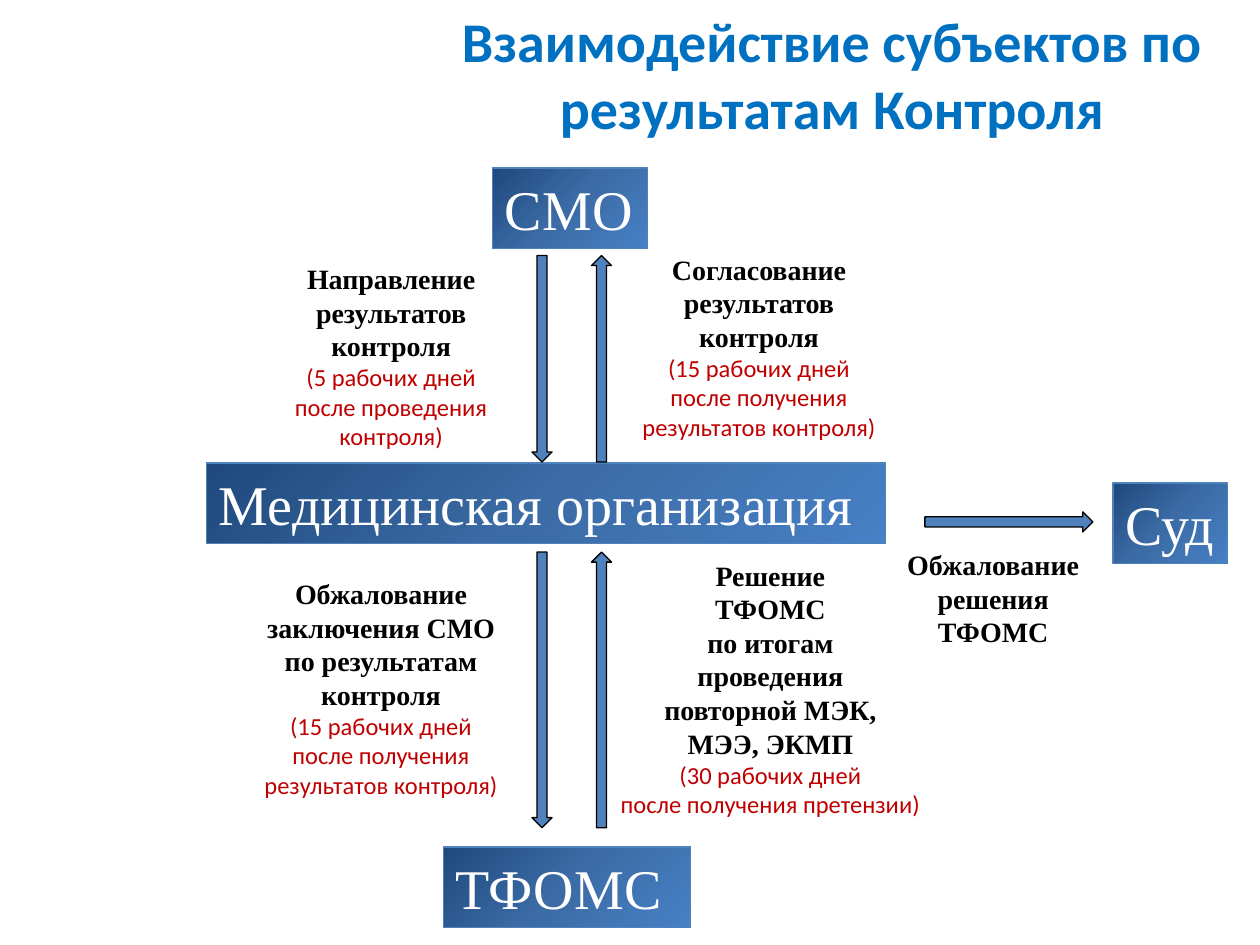
from copy import deepcopy
from typing import NamedTuple

from pptx import Presentation
from pptx.dml.color import RGBColor
from pptx.enum.shapes import MSO_SHAPE as Preset
from pptx.enum.text import MSO_ANCHOR as Anchor, MSO_AUTO_SIZE as AutoSize, PP_ALIGN as Align
from pptx.oxml.ns import qn
from pptx.util import Pt

TITLE_BLUE = RGBColor(0x00, 0x70, 0xC0)
ACCENT = RGBColor(0x4F, 0x81, 0xBD)
BLACK = RGBColor(0x00, 0x00, 0x00)
WHITE = RGBColor(0xFF, 0xFF, 0xFF)
RED = RGBColor(0xC0, 0x00, 0x00)
GRADIENT = (
    (0, RGBColor(0x1F, 0x49, 0x7D)),
    (0.5, RGBColor(0x3C, 0x6C, 0xA6)),
    (1, RGBColor(0x47, 0x80, 0xC5)),
)
SERIF = "Times New Roman"
SANS = "Calibri"

ARROW_THICKNESS = 11.5
DOWN_X, UP_X = 304, 338


class Area(NamedTuple):
    left: float
    top: float
    width: float
    height: float

    def lengths(self):
        return [Pt(value) for value in self]


class Party(NamedTuple):
    name: str
    area: Area
    wrap: bool = True


class Arrow(NamedTuple):
    preset: Preset
    area: Area


class Label(NamedTuple):
    area: Area
    action: list[str]
    deadline: list[str]
    wrap: bool = False


PARTIES = [
    Party("СМО", Area(281.5, 96, 88.5, 46)),
    Party("Медицинская организация", Area(118, 264.5, 388, 46)),
    Party("ТФОМС", Area(253.5, 484, 141, 46)),
    Party("Суд", Area(636, 276, 65.5, 46), wrap=False),
]
ARROWS = [
    Arrow(preset, Area(left, top, ARROW_THICKNESS, height))
    for top, height in ((146, 118), (315.5, 157.5))
    for preset, left in ((Preset.DOWN_ARROW, DOWN_X), (Preset.UP_ARROW, UP_X))
] + [Arrow(Preset.RIGHT_ARROW, Area(528.5, 292.5, 96, ARROW_THICKNESS))]
LABELS = [
    Label(Area(157.5, 146, 132, 116.5),
          ["Направление", "результатов", "контроля"],
          ["(5 рабочих дней", "после проведения", "контроля)"]),
    Label(Area(360, 140.5, 147.5, 116.5),
          ["Согласование", "результатов", "контроля"],
          ["(15 рабочих дней", "после получения", "результатов контроля)"]),
    Label(Area(142.5, 326, 150.5, 155),
          ["Обжалование", "заключения СМО", "по результатам", "контроля"],
          ["(15 рабочих дней", "после получения", "результатов контроля)"]),
    Label(Area(343.5, 315.5, 193.5, 177),
          ["Решение", "ТФОМС", "по итогам", "проведения", "повторной МЭК,", "МЭЭ, ЭКМП"],
          ["(30 рабочих дней", "после получения претензии)"]),
    Label(Area(506, 309.5, 123, 65.5),
          ["Обжалование", "решения", "ТФОМС"], [], wrap=True),
]


def write(frame, text: str, *, font: str, size: float, color: RGBColor,
          bold: bool = False, align: Align = Align.CENTER) -> None:
    """Fill the first paragraph if it is empty, otherwise add one."""
    para = frame.paragraphs[0]
    if para.runs:
        para = frame.add_paragraph()
    para.alignment = align
    span = para.add_run()
    span.text = text
    span.font.name = font
    span.font.size = Pt(size)
    span.font.bold = bold
    span.font.color.rgb = color


def fill_gradient(shape) -> None:
    shape.fill.gradient()
    shape.fill.gradient_angle = 315
    stop_list = shape.element.spPr.find(qn("a:gradFill")).find(qn("a:gsLst"))
    stop_list.insert(1, deepcopy(stop_list[0]))
    for stop, (position, color) in zip(shape.fill.gradient_stops, GRADIENT):
        stop.position = position
        stop.color.rgb = color


def add_outlined(page, preset: Preset, area: Area, line: RGBColor):
    shape = page.shapes.add_shape(preset, *area.lengths())
    shape.shadow.inherit = False
    shape.line.color.rgb = line
    shape.line.width = Pt(0.75)
    return shape


def add_title(page) -> None:
    box = page.shapes.add_textbox(*Area(247.5, 0, 456, 84).lengths())
    box.text_frame.word_wrap = True
    box.text_frame.vertical_anchor = Anchor.MIDDLE
    write(box.text_frame, "Взаимодействие субъектов по результатам Контроля",
          font=SANS, size=32, color=TITLE_BLUE, bold=True)


def add_party(page, party: Party) -> None:
    shape = add_outlined(page, Preset.RECTANGLE, party.area, ACCENT)
    fill_gradient(shape)
    frame = shape.text_frame
    frame.word_wrap = party.wrap
    frame.auto_size = AutoSize.SHAPE_TO_FIT_TEXT
    frame.vertical_anchor = Anchor.TOP
    write(frame, party.name, font=SERIF, size=32, color=WHITE, align=Align.LEFT)


def add_arrow(page, arrow: Arrow) -> None:
    shape = add_outlined(page, arrow.preset, arrow.area, BLACK)
    shape.fill.solid()
    shape.fill.fore_color.rgb = ACCENT


def add_label(page, label: Label) -> None:
    frame = page.shapes.add_textbox(*label.area.lengths()).text_frame
    frame.word_wrap = label.wrap
    frame.auto_size = AutoSize.SHAPE_TO_FIT_TEXT
    for text in label.action:
        write(frame, text, font=SERIF, size=16, color=BLACK, bold=True)
    for text in label.deadline:
        write(frame, text, font=SANS, size=14, color=RED)


def main() -> None:
    deck = Presentation()
    deck.slide_width, deck.slide_height = Pt(720), Pt(540)
    page = deck.slides.add_slide(deck.slide_layouts[6])
    add_title(page)
    for party in PARTIES:
        add_party(page, party)
    for arrow in ARROWS:
        add_arrow(page, arrow)
    for label in LABELS:
        add_label(page, label)
    deck.save("out.pptx")


if __name__ == "__main__":
    main()
